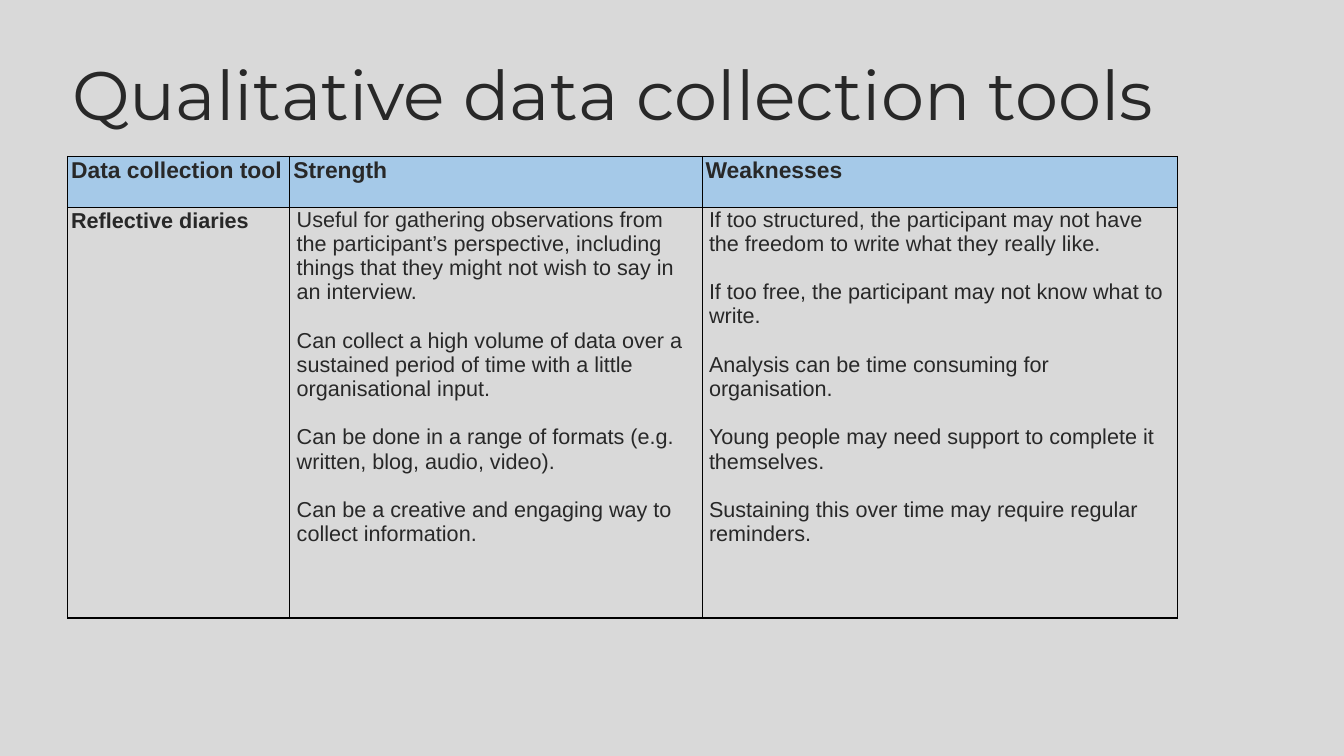
import pptx
import pptx.util
import pptx.dml.color
import pptx.enum.text
import lxml.etree

Pt = pptx.util.Pt
RGBColor = pptx.dml.color.RGBColor
INK = RGBColor(0x28, 0x28, 0x28)
BLUE = RGBColor(0xA5, 0xC9, 0xE8)
GREY = RGBColor(0xD9, 0xD9, 0xD9)
BLACK = RGBColor(0, 0, 0)

LABEL = {"line_spacing": 1.07, "space_after": Pt(8)}
BODY_GAP = Pt(19)
COLUMNS = [175, 324.7, 374.4]
ROWS = [40.3, 323.3]
CELLS = [
    [["Data collection tool"], ["Strength"], ["Weaknesses"]],
    [
        ["Reflective diaries"],
        [
            "Useful for gathering observations from the participant’s perspective, "
            "including things that they might not wish to say in an interview.",
            "Can collect a high volume of data over a sustained period of time "
            "with a little organisational input.",
            "Can be done in a range of formats (e.g. written, blog, audio, video).",
            "Can be a creative and engaging way to collect information.",
        ],
        [
            "If too structured, the participant may not have the freedom to write "
            "what they really like.",
            "If too free, the participant may not know what to write.",
            "Analysis can be time consuming for organisation.",
            "Young people may need support to complete it themselves.",
            "Sustaining this over time may require regular reminders.",
        ],
    ],
]


def set_font(font, name, size, bold=False):
    for key, value in {"name": name, "size": Pt(size), "bold": bold}.items():
        setattr(font, key, value)
    font.color.rgb = INK


def add_borders(cell):
    tcPr = cell._tc.get_or_add_tcPr()
    ns = "{http://schemas.openxmlformats.org/drawingml/2006/main}"
    for i, side in enumerate(["lnL", "lnR", "lnT", "lnB"]):
        ln = lxml.etree.Element(ns + side, w=str(Pt(1)))
        fill = lxml.etree.SubElement(ln, ns + "solidFill")
        lxml.etree.SubElement(fill, ns + "srgbClr", val=str(BLACK))
        tcPr.insert(i, ln)


prs = pptx.Presentation()
prs.slide_width, prs.slide_height = Pt(1058.4), Pt(595.4)
s = prs.slides.add_slide(prs.slide_layouts[5])
s.background.fill.solid()
s.background.fill.fore_color.rgb = GREY

# Title
title = s.shapes.title
title_box = {"left": 53.3, "top": 23.8, "width": 952.6, "height": 99.4}
for key, value in title_box.items():
    setattr(title, key, Pt(value))
tf = title.text_frame
for side in ["left", "right", "top", "bottom"]:
    setattr(tf, "margin_" + side, Pt(3.6))
tf.vertical_anchor = pptx.enum.text.MSO_ANCHOR.MIDDLE
tf.word_wrap = True
p = tf.paragraphs[0]
p.alignment = pptx.enum.text.PP_ALIGN.LEFT
r = p.add_run()
r.text = "Qualitative data collection tools"
set_font(r.font, "Montserrat", 54)

# Table
table = s.shapes.add_table(
    len(ROWS), len(COLUMNS), Pt(53.3), Pt(123.1), Pt(sum(COLUMNS)), Pt(sum(ROWS))
).table
for column, width in zip(table.columns, COLUMNS):
    column.width = Pt(width)
for row, height in zip(table.rows, ROWS):
    row.height = Pt(height)

# Cells: header row and first column are bold labels
for i, row in enumerate(CELLS):
    for j, texts in enumerate(row):
        cell = table.cell(i, j)
        is_label = i == 0 or j == 0
        side = Pt(2.7 if is_label else 5.4)
        margins = {"margin_left": side, "margin_right": side,
                   "margin_top": 0, "margin_bottom": 0}
        for key, value in margins.items():
            setattr(cell, key, value)
        if i == 0:
            cell.fill.solid()
            cell.fill.fore_color.rgb = BLUE
        else:
            cell.fill.background()
        add_borders(cell)
        for k, text in enumerate(texts):
            tf = cell.text_frame
            p = tf.paragraphs[0] if k == 0 else tf.add_paragraph()
            if is_label:
                for key, value in LABEL.items():
                    setattr(p, key, value)
            elif k > 0:
                p.space_before = BODY_GAP
            r = p.add_run()
            r.text = text
            set_font(r.font, "Arial", 18 if i == 0 else 17, is_label)

prs.save("out.pptx")
